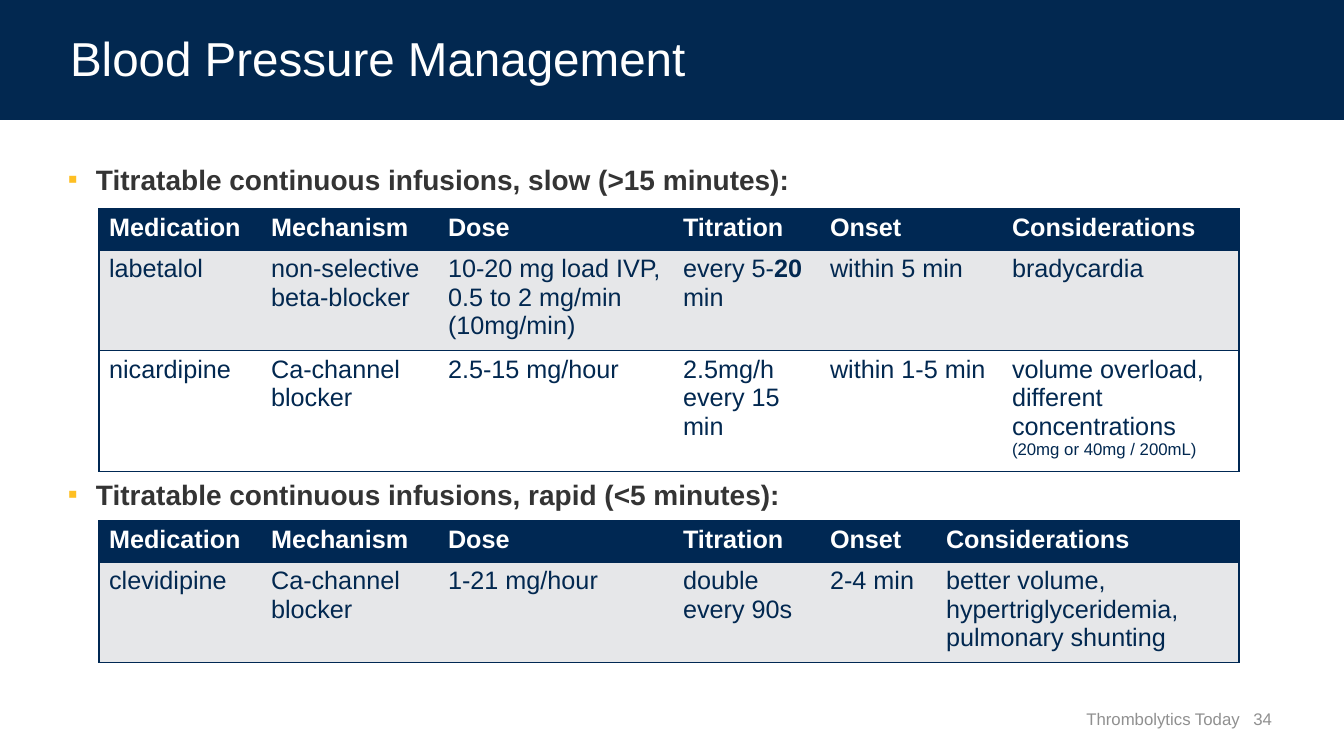
from lxml import etree
from pptx import Presentation
from pptx.dml.color import RGBColor
from pptx.enum.shapes import MSO_SHAPE
from pptx.enum.text import MSO_ANCHOR, PP_ALIGN
from pptx.oxml.ns import qn
from pptx.util import Pt

RECTANGLE = MSO_SHAPE.RECTANGLE
TOP, BOTTOM = MSO_ANCHOR.TOP, MSO_ANCHOR.BOTTOM
LEFT, RIGHT = PP_ALIGN.LEFT, PP_ALIGN.RIGHT
BAND_NAVY = RGBColor(0x02, 0x28, 0x50)
TABLE_NAVY = RGBColor(0x00, 0x28, 0x53)
STRIPE = RGBColor(0xE6, 0xE7, 0xE9)
WHITE = RGBColor(0xFF, 0xFF, 0xFF)
CHARCOAL = RGBColor(0x34, 0x34, 0x34)
GRAY = RGBColor(0x90, 0x90, 0x90)
GOLD = RGBColor(0xFE, 0xBF, 0x23)
PX_PER_INCH = 100.8

TITLE_FONT = {"size": 34, "color": WHITE}
HEADING_FONT = {"size": 20, "color": CHARCOAL, "bold": True}
HEADER_FONT = {"size": 18, "color": WHITE, "bold": True}
CELL_FONT = {"size": 18, "color": BAND_NAVY, "bold": False}
FOOTER_FONT = {"size": 12, "color": GRAY}

HEADERS = ["Medication", "Mechanism", "Dose", "Titration", "Onset", "Considerations"]
SLOW_ROWS = [
    ["labetalol", "non-selective beta-blocker", "10-20 mg load IVP, 0.5 to 2 mg/min (10mg/min)",
     [("every 5-", {}), ("20", {"bold": True}), (" min", {})], "within 5 min", "bradycardia"],
    ["nicardipine", "Ca-channel blocker", "2.5-15 mg/hour", "2.5mg/h every 15 min", "within 1-5 min",
     [("volume overload, different concentrations ", {}), ("(20mg or 40mg / 200mL)", {"size": 12})]],
]
RAPID_ROWS = [
    ["clevidipine", "Ca-channel blocker", "1-21 mg/hour", "double every 90s", "2-4 min",
     "better volume, hypertriglyceridemia, pulmonary shunting"],
]
SECTIONS = [
    {"heading": "Titratable continuous infusions, slow (>15 minutes):", "box": (58, 157, 1220, 510),
     "table_top": 209, "rows": SLOW_ROWS, "heights": [41, 95, 114],
     "widths": [162, 177, 235, 147, 182, 237]},
    {"heading": "Titratable continuous infusions, rapid (<5 minutes):", "box": (58, 472, 1220, 213),
     "table_top": 521, "rows": RAPID_ROWS, "heights": [41, 95],
     "widths": [162, 177, 235, 147, 116, 303]},
]


def px(length):
    """Turn pixels into EMU."""
    return round(length * 914400 / PX_PER_INCH)


def add_run(paragraph, text, style):
    """Append a run formatted from a style dict."""
    run = paragraph.add_run()
    run.text = text
    run.font.color.rgb = style["color"]
    values = {"name": "Arial", "size": Pt(style["size"]), "bold": style.get("bold", False)}
    for name, value in values.items():
        setattr(run.font, name, value)


def format_frame(frame, anchor, side=10):
    """Set wrapping, anchor and insets of a text frame."""
    values = {"word_wrap": True, "vertical_anchor": anchor, "margin_left": px(side),
              "margin_right": px(side), "margin_top": px(5), "margin_bottom": px(5)}
    for name, value in values.items():
        setattr(frame, name, value)


def add_title(slide, box, text):
    """Draw the title band and place the title over it."""
    left, top, width, height = box
    band = slide.shapes.add_shape(RECTANGLE, *map(px, box))
    band.shadow.inherit = False
    band.fill.solid()
    band.fill.fore_color.rgb = BAND_NAVY
    band.line.fill.background()
    title = slide.shapes.title
    title.element.addprevious(band.element)
    place = {"left": left + 60, "top": top + 43, "width": 1008, "height": 49}
    for name, value in place.items():
        setattr(title, name, px(value))
    format_frame(title.text_frame, BOTTOM)
    paragraph = title.text_frame.paragraphs[0]
    paragraph.alignment = LEFT
    paragraph.line_spacing = 0.9
    add_run(paragraph, text, TITLE_FONT)


def add_heading(slide, box, text):
    """Add a bulleted section heading."""
    frame = slide.shapes.add_textbox(*map(px, box)).text_frame
    format_frame(frame, TOP)
    paragraph = frame.paragraphs[0]
    properties = paragraph._p.get_or_add_pPr()
    properties.set("marL", str(px(28)))
    properties.set("indent", str(-px(28)))
    color = etree.SubElement(properties, qn("a:buClr"))
    etree.SubElement(color, qn("a:srgbClr"), val=str(GOLD))
    etree.SubElement(properties, qn("a:buFont"), typeface="Arial")
    etree.SubElement(properties, qn("a:buChar"), char="▪")
    add_run(paragraph, text, HEADING_FONT)


def set_borders(cell, visible_sides):
    """Draw the named sides of a cell and clear the others."""
    properties = cell._tc.get_or_add_tcPr()
    for side in "LRTB":
        line = etree.SubElement(properties, qn(f"a:ln{side}"), w=str(Pt(1)))
        if side in visible_sides:
            fill = etree.SubElement(line, qn("a:solidFill"))
            etree.SubElement(fill, qn("a:srgbClr"), val=str(TABLE_NAVY))
        else:
            etree.SubElement(line, qn("a:noFill"))


def add_medication_table(slide, left, top, rows, widths, heights):
    """Add a striped medication table with a navy header row."""
    frame = slide.shapes.add_table(len(heights), len(widths), px(left), px(top),
                                   px(sum(widths)), px(sum(heights)))
    table = frame.table
    for column, width in zip(table.columns, widths):
        column.width = px(width)
    for row, height in zip(table.rows, heights):
        row.height = px(height)
    last = len(widths) - 1
    for row_index, values in enumerate([HEADERS, *rows]):
        style = CELL_FONT if row_index else HEADER_FONT
        fill = (STRIPE if row_index % 2 else WHITE) if row_index else TABLE_NAVY
        for column_index, value in enumerate(values):
            cell = table.cell(row_index, column_index)
            set_borders(cell, "TB" + {0: "L", last: "R"}.get(column_index, ""))
            cell.fill.solid()
            cell.fill.fore_color.rgb = fill
            runs = [(value, {})] if isinstance(value, str) else value
            for text, changes in runs:
                add_run(cell.text_frame.paragraphs[0], text, {**style, **changes})


def add_section(slide, section):
    """Add a heading with its medication table."""
    add_heading(slide, section["box"], section["heading"])
    add_medication_table(slide, section["box"][0] + 41, section["table_top"], section["rows"],
                         section["widths"], section["heights"])


def add_footer(slide, box, label, number):
    """Place the footer label and the slide number side by side."""
    left, top, width, height = box
    number_width = 32
    label_width = width - number_width
    for text, start, part_width in [(label, left, label_width),
                                    (number, left + label_width, number_width)]:
        shape = slide.shapes.add_textbox(px(start), px(top), px(part_width), px(height))
        format_frame(shape.text_frame, BOTTOM, side=0)
        paragraph = shape.text_frame.paragraphs[0]
        paragraph.alignment = RIGHT
        paragraph.line_spacing = 0.9
        add_run(paragraph, text, FOOTER_FONT)


def main():
    """Build and save the presentation."""
    presentation = Presentation()
    presentation.slide_width, presentation.slide_height = px(1344), px(756)
    slide = presentation.slides.add_slide(presentation.slide_layouts[5])
    add_title(slide, (0, 0, 1344, 120), "Blood Pressure Management")
    for section in SECTIONS:
        add_section(slide, section)
    add_footer(slide, (767, 701, 505, 33), "Thrombolytics Today", "34")
    presentation.save("out.pptx")


if __name__ == "__main__":
    main()
